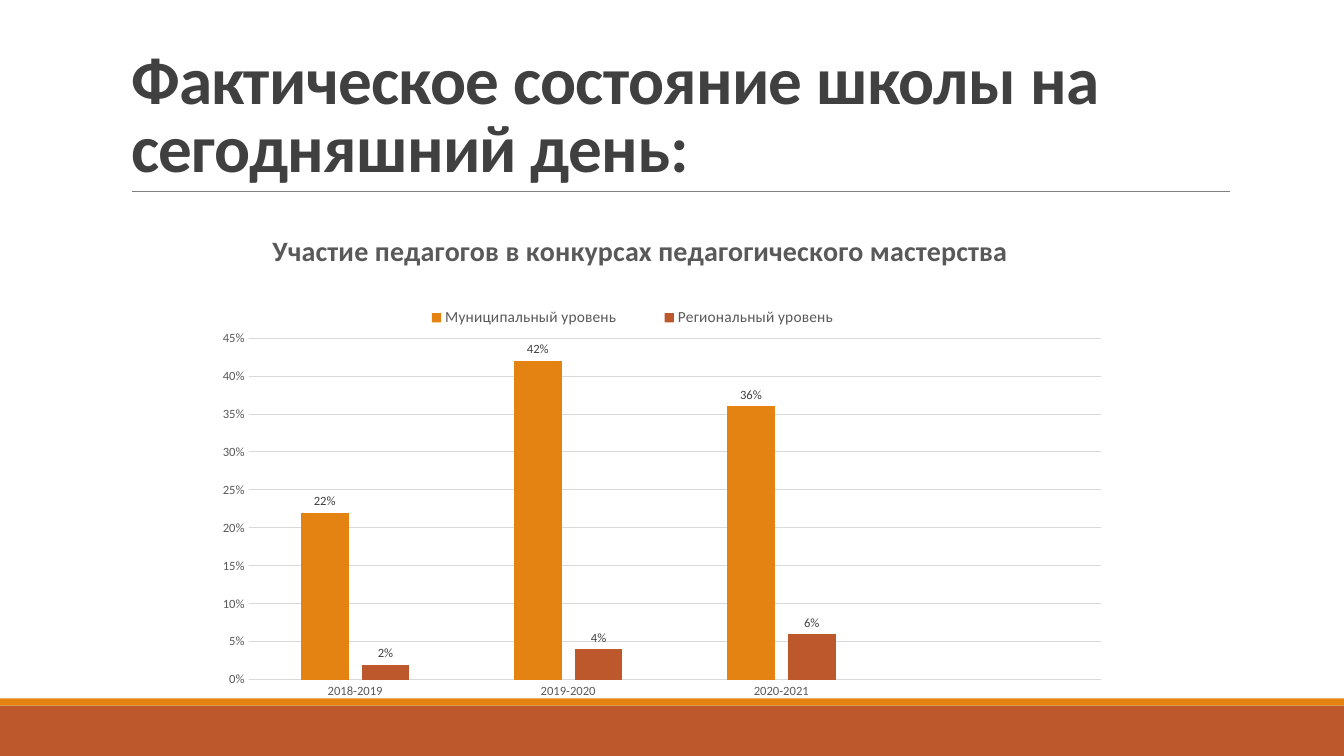
import pptx
import pptx.chart.data
import pptx.dml.color
import pptx.enum.chart
import pptx.enum.shapes
import pptx.enum.text
import pptx.oxml
import pptx.oxml.ns
import pptx.util
from pptx.util import Cm, Pt

FONT = "Calibri"
ORANGE, RUST = "E48312", "BD582C"
DARK, GREY, GRID = "404040", "595959", "D9D9D9"
PERCENT = "0%"
YEARS = ["2018-2019", "2019-2020", "2020-2021", ""]
LEVELS = [
    ("Муниципальный уровень", (0.22, 0.42, 0.36, None), ORANGE),
    ("Региональный уровень", (0.02, 0.04, 0.06, None), RUST),
]


def rgb(color):
    return pptx.dml.color.RGBColor.from_string(color)


def paint(fill, color):
    fill.solid()
    fill.fore_color.rgb = rgb(color)


def style_line(line, color, width):
    line.color.rgb = rgb(color)
    line.width = Pt(width)


def style_font(font, size, color, bold=False):
    font.name = FONT
    font.size = Pt(size)
    font.bold = bold
    font.color.rgb = rgb(color)


def write_text(frame, text, size, color, bold=False, line_spacing=None, tracking=None):
    """Fill the frame with one paragraph; tracking is in points."""
    paragraph = frame.paragraphs[0]
    if line_spacing:
        paragraph.line_spacing = line_spacing
    run = paragraph.add_run()
    run.text = text
    style_font(run.font, size, color, bold)
    if tracking is not None:
        run.font._element.set("spc", str(round(tracking * 100)))


def add_band(slide, top, height, color):
    band = slide.shapes.add_shape(
        pptx.enum.shapes.MSO_SHAPE.RECTANGLE, 0, Cm(top), Cm(33.87), Cm(height))
    band.shadow.inherit = False
    paint(band.fill, color)
    band.line.fill.background()


def add_rule(slide, left, right, y):
    rule = slide.shapes.add_connector(
        pptx.enum.shapes.MSO_CONNECTOR.STRAIGHT, Cm(left), Cm(y), Cm(right), Cm(y))
    style_line(rule.line, "808080", 0.5)
    rule._element.spPr.append(pptx.oxml.parse_xml(
        f'<a:effectLst {pptx.oxml.ns.nsdecls("a")}/>'))


def place_heading(slide, text):
    heading = slide.shapes.title
    heading.left, heading.top = Cm(3.05), Cm(0.79)
    heading.width, heading.height = Cm(27.94), Cm(4.04)
    frame = heading.text_frame
    frame.word_wrap = True
    frame.auto_size = pptx.enum.text.MSO_AUTO_SIZE.NONE
    frame.vertical_anchor = pptx.enum.text.MSO_ANCHOR.BOTTOM
    write_text(frame, text, 48, DARK, bold=True, line_spacing=0.85, tracking=-0.5)
    frame.paragraphs[0].alignment = pptx.enum.text.PP_ALIGN.LEFT


def set_layout(part, inner=False, **bounds):
    """Place a chart part by fractions of the chart area."""
    qn = pptx.oxml.ns.qn
    for old in part.findall(qn("c:layout")):
        part.remove(old)
    target = '<c:layoutTarget val="inner"/>' if inner else ""
    modes = "".join(f'<c:{key}Mode val="edge"/>' for key in "xy")
    values = "".join(f'<c:{key} val="{value}"/>' for key, value in bounds.items())
    layout = pptx.oxml.parse_xml(
        f'<c:layout {pptx.oxml.ns.nsdecls("c")}><c:manualLayout>'
        f'{target}{modes}{values}</c:manualLayout></c:layout>')
    overlay = part.find(qn("c:overlay"))
    part.insert(0 if overlay is None else part.index(overlay), layout)


def style_axis(axis):
    none = pptx.enum.chart.XL_TICK_MARK.NONE
    axis.major_tick_mark = axis.minor_tick_mark = none
    style_font(axis.tick_labels.font, 9, GREY)


def style_series(series, color):
    paint(series.format.fill, color)
    series.invert_if_negative = False
    labels = series.data_labels
    labels.show_value = True
    labels.position = pptx.enum.chart.XL_LABEL_POSITION.OUTSIDE_END
    labels.number_format = PERCENT
    labels.number_format_is_linked = False
    style_font(labels.font, 9, DARK)


def add_contest_chart(slide, title):
    data = pptx.chart.data.CategoryChartData(number_format=PERCENT)
    data.categories = YEARS
    for name, shares, _ in LEVELS:
        data.add_series(name, shares)
    chart = slide.shapes.add_chart(
        pptx.enum.chart.XL_CHART_TYPE.COLUMN_CLUSTERED,
        Cm(4.14), Cm(5.18), Cm(23.62), Cm(12.85), data).chart
    style_font(chart.font, 10, "000000")

    chart.has_title = True
    write_text(chart.chart_title.text_frame, title, 20, GREY, bold=True)
    set_layout(chart.chart_title._element, x=0.11, y=0.04)

    chart.has_legend = True
    chart.legend.position = pptx.enum.chart.XL_LEGEND_POSITION.BOTTOM
    chart.legend.include_in_layout = False
    style_font(chart.legend.font, 11, GREY)
    set_layout(chart.legend._element, x=0.24, y=0.19, w=0.52, h=0.06)

    style_axis(chart.category_axis)
    style_line(chart.category_axis.format.line, GRID, 0.75)
    shares_axis = chart.value_axis
    style_axis(shares_axis)
    shares_axis.minimum_scale, shares_axis.maximum_scale = 0, 0.45
    shares_axis.major_unit = 0.05
    shares_axis.tick_labels.number_format = PERCENT
    shares_axis.tick_labels.number_format_is_linked = False
    shares_axis.format.line.fill.background()
    style_line(shares_axis.major_gridlines.format.line, GRID, 0.75)

    columns = chart.plots[0]
    columns.vary_by_categories = False
    columns.gap_width, columns.overlap = 219, -27
    for series, (_, _, color) in zip(columns.series, LEVELS):
        style_series(series, color)
    set_layout(chart._chartSpace.chart.plotArea, inner=True,
               x=0.09, y=0.26, w=0.91, h=0.67)


def main():
    deck = pptx.Presentation()
    deck.slide_width, deck.slide_height = Cm(33.87), Cm(19.05)
    slide = deck.slides.add_slide(deck.slide_layouts.get_by_name("Title Only"))
    add_band(slide, 17.78, 1.27, RUST)
    add_band(slide, 17.6, 0.18, ORANGE)
    add_rule(slide, 3.33, 31, 4.83)
    place_heading(slide, "Фактическое состояние школы на сегодняшний день:")
    add_contest_chart(slide, "Участие педагогов в конкурсах педагогического мастерства")
    deck.save("out.pptx")


if __name__ == "__main__":
    main()
